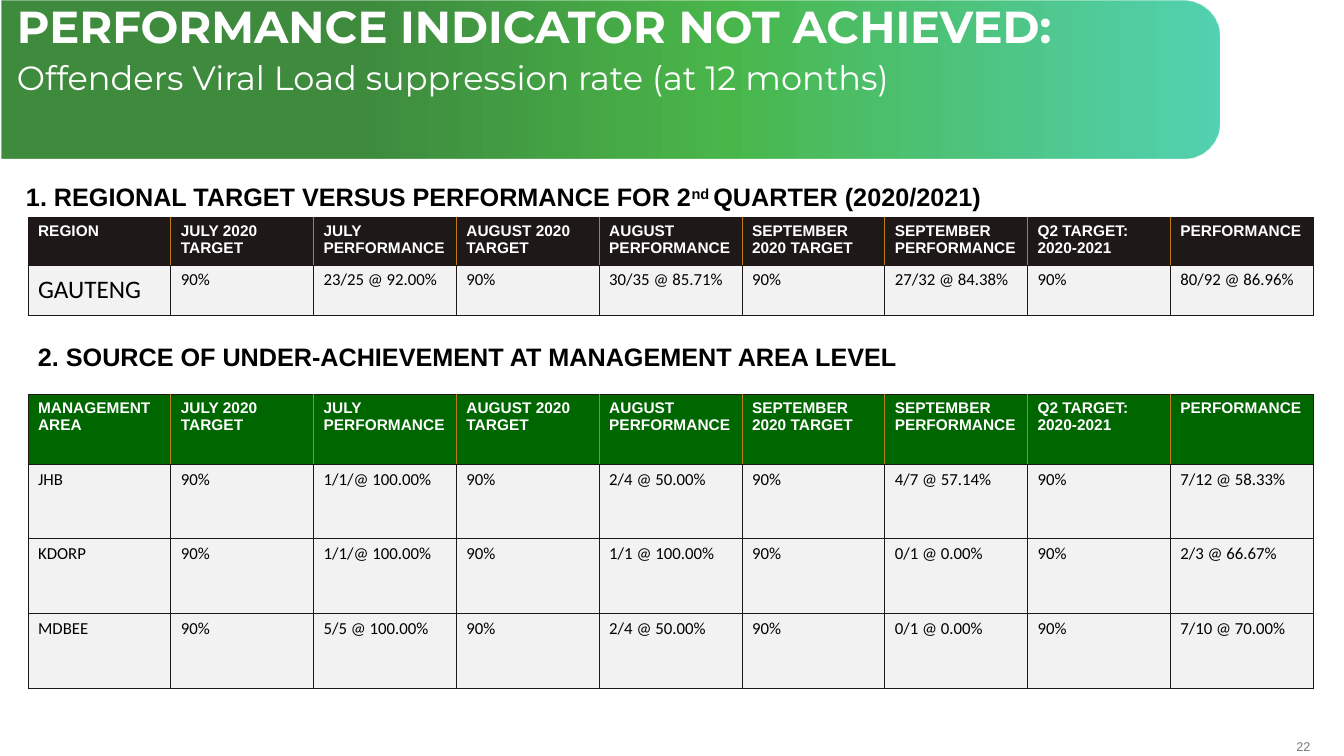
from lxml import etree
from pptx import Presentation
from pptx.dml.color import RGBColor
from pptx.enum.shapes import MSO_SHAPE
from pptx.enum.text import MSO_ANCHOR, PP_ALIGN
from pptx.oxml import parse_xml
from pptx.util import Pt

ROUND = MSO_SHAPE.ROUND_2_SAME_RECTANGLE
MIDDLE = MSO_ANCHOR.MIDDLE
TOP = MSO_ANCHOR.TOP
LEFT = PP_ALIGN.LEFT
RIGHT = PP_ALIGN.RIGHT
BLACK = RGBColor(0x00, 0x00, 0x00)
WHITE = RGBColor(0xFF, 0xFF, 0xFF)
GREY = RGBColor(0x77, 0x78, 0x7B)
PALE = RGBColor(0xF2, 0xF2, 0xF2)
INK = RGBColor(0x1E, 0x19, 0x18)
AMBER = RGBColor(0xBF, 0x7B, 0x17)
GREEN = RGBColor(0x00, 0x66, 0x00)
LEAF = RGBColor(0x00, 0x99, 0x00)
TEAL = RGBColor(0x00, 0xBC, 0x8D)
NS = "http://schemas.openxmlformats.org/drawingml/2006/main"

deck = Presentation()
deck.slide_width, deck.slide_height = Pt(960), Pt(540)
slide = deck.slides.add_slide(deck.slide_layouts[6])


def write(para, text, size=12, font="Calibri", color=BLACK, bold=False,
          align=LEFT, raised=None):
    para.alignment = align
    for i, line in enumerate(text.split("\n")):
        if i:
            para.add_line_break()
        run = para.add_run()
        run.text = line
        run.font.size = Pt(size)
        run.font.name = font
        run.font.bold = bold
        run.font.color.rgb = color
        if raised:
            run.font._element.set("baseline", str(raised * 1000))


def box(left, top, width, height, pad=True):
    frame = slide.shapes.add_textbox(Pt(left), Pt(top), Pt(width), Pt(height)).text_frame
    frame.word_wrap = True
    if not pad:
        frame.margin_left = frame.margin_right = 0
        frame.margin_top = frame.margin_bottom = 0
    return frame


banner = slide.shapes.add_shape(ROUND, Pt(379.5), Pt(-378), Pt(113), Pt(870))
banner.rotation = 90
banner.adjustments[0] = 0.233
banner.adjustments[1] = 0
banner.shadow.inherit = False
banner.line.fill.background()
stops = "".join(
    f'<a:gs pos="{pos}000"><a:srgbClr val="{color}"><a:alpha val="{alpha}000"/></a:srgbClr></a:gs>'
    for pos, color, alpha in [(30, GREEN, 75), (59, LEAF, 71), (100, TEAL, 67)])
blend = parse_xml(f'<a:gradFill xmlns:a="{NS}" rotWithShape="1"><a:gsLst>{stops}</a:gsLst>'
                  '<a:lin ang="16200000" scaled="0"/></a:gradFill>')
banner._element.spPr.find(f"{{{NS}}}prstGeom").addnext(blend)

title = box(5, 0, 862.5, 41)
head = title.paragraphs[0]
head.space_after = Pt(6)
write(head, "PERFORMANCE INDICATOR NOT ACHIEVED:", size=32, font="Montserrat",
      color=WHITE, bold=True)
sub = title.add_paragraph()
write(sub, "Offenders Viral Load suppression rate (at 12 months)", size=24,
      font="Montserrat", color=WHITE)
for para in title.paragraphs:
    para.line_spacing = 0.9

bold = dict(size=18, font="Arial", bold=True)
first = box(11.5, 126, 703, 29).paragraphs[0]
write(first, "1. REGIONAL TARGET VERSUS PERFORMANCE FOR 2", **bold)
write(first, "nd ", raised=30, **bold)
write(first, "QUARTER (2020/2021)", **bold)
write(box(20, 240, 695, 29).paragraphs[0],
      "2. SOURCE OF UNDER-ACHIEVEMENT AT MANAGEMENT AREA LEVEL", **bold)

heads = ["JULY 2020\nTARGET", "JULY PERFORMANCE", "AUGUST 2020\nTARGET",
         "AUGUST PERFORMANCE", "SEPTEMBER 2020 TARGET", "SEPTEMBER PERFORMANCE",
         "Q2 TARGET: 2020-2021", "PERFORMANCE"]
region = [("GAUTENG", "23/25 @ 92.00%", "30/35 @ 85.71%", "27/32 @ 84.38%", "80/92 @ 86.96%")]
areas = [("JHB", "1/1/@ 100.00%", "2/4 @ 50.00%", "4/7 @ 57.14%", "7/12 @ 58.33%"),
         ("KDORP", "1/1/@ 100.00%", "1/1 @ 100.00%", "0/1 @ 0.00%", "2/3 @ 66.67%"),
         ("MDBEE", "5/5 @ 100.00%", "2/4 @ 50.00%", "0/1 @ 0.00%", "7/10 @ 70.00%")]

for label, data, top, tall, high, fill, big in [
        ("REGION", region, 155.5, 33.5, 36, INK, 18),
        ("MANAGEMENT AREA", areas, 281.5, 50, 53.4, GREEN, 12)]:
    rows = [[label] + heads]
    for name, *rates in data:
        rows.append([name] + [text for rate in rates for text in ("90%", rate)])
    last = len(heads)
    grid = slide.shapes.add_table(len(rows), last + 1, Pt(20), Pt(top), Pt(918),
                                  Pt(tall + high * len(data))).table
    grid.horz_banding = False
    for col in grid.columns:
        col.width = Pt(102)
    for r, row in enumerate(rows):
        grid.rows[r].height = Pt(high if r else tall)
        for c, text in enumerate(row):
            cell = grid.cell(r, c)
            para = cell.text_frame.paragraphs[0]
            if r == 0:
                write(para, text, size=11, font="Arial", color=WHITE, bold=True)
            else:
                write(para, text, size=12 if c else big)
            cell.vertical_anchor = MIDDLE if text == "GAUTENG" else TOP
            cell.fill.solid()
            cell.fill.fore_color.rgb = PALE if r else fill
            props = cell._tc.get_or_add_tcPr()
            inner = INK if r else AMBER
            sides = [("L", inner if c else INK), ("R", inner if c < last else INK),
                     ("T", INK), ("B", INK)]
            for i, (side, color) in enumerate(sides):
                line = etree.Element(f"{{{NS}}}ln{side}", w="6350")
                solid = etree.SubElement(line, f"{{{NS}}}solidFill")
                etree.SubElement(solid, f"{{{NS}}}srgbClr", val=str(color))
                props.insert(i, line)

page = box(908, 528, 28, 10.8, pad=False)
page.vertical_anchor = MIDDLE
write(page.paragraphs[0], "22", size=9, font="Arial", color=GREY, align=RIGHT)

deck.save("out.pptx")
